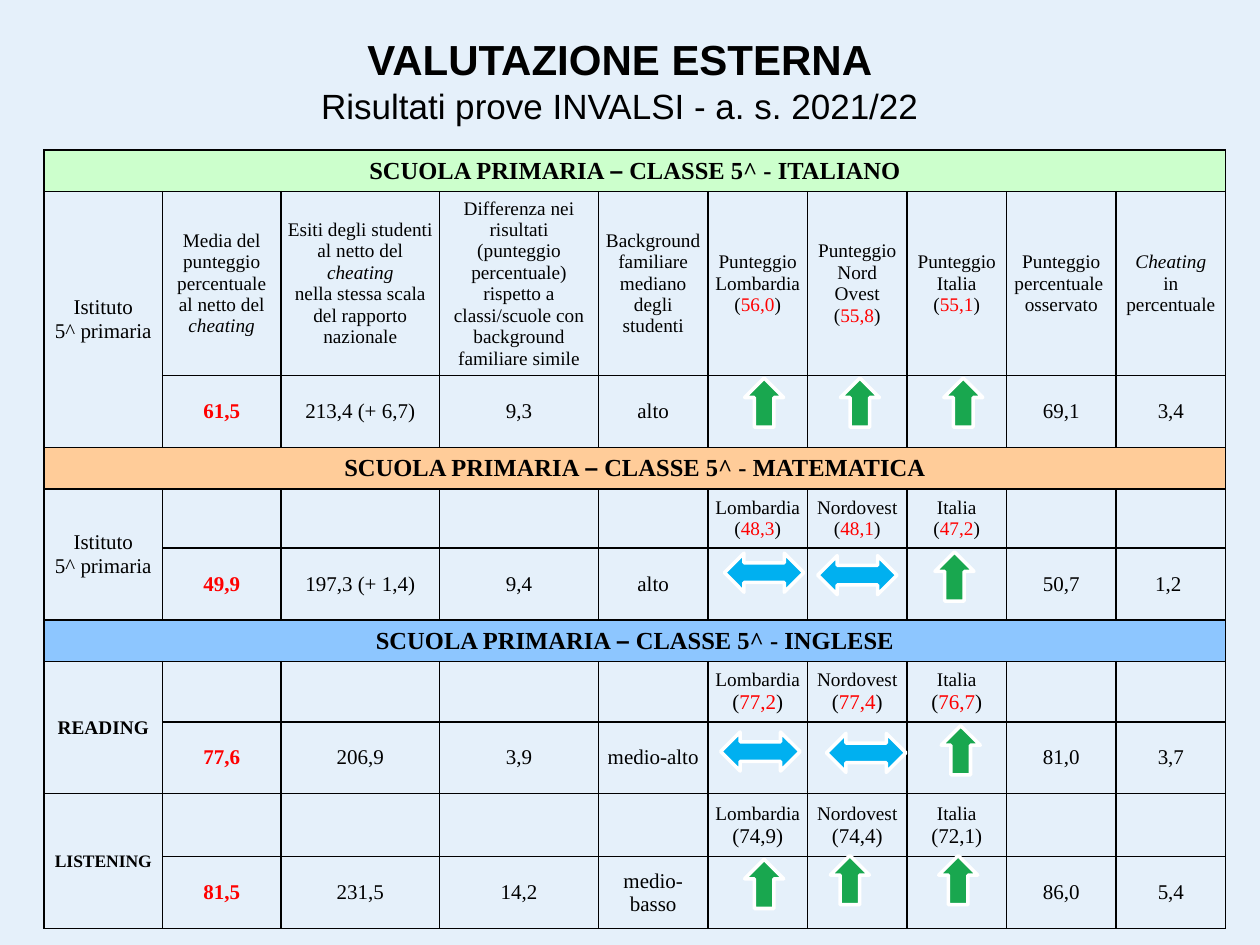
from dataclasses import dataclass
from typing import Optional

from lxml import etree
from pptx import Presentation
from pptx import util as u
from pptx.dml.color import RGBColor
from pptx.enum import shapes, text
from pptx.oxml import ns

SERIF, SANS = "Times New Roman", "Arial"
BLACK, RED, WHITE = "000000", "FF0000", "FFFFFF"
COLUMNS = (0.94, 0.94, 1.26, 1.26, 0.87, 0.79, 0.79, 0.79, 0.87, 0.87)
ROWS = (0.33, 1.38, 0.57, 0.33, 0.47, 0.57, 0.33, 0.48, 0.57, 0.5, 0.57)


@dataclass(frozen=True)
class Run:
    text: str
    color: Optional[str] = None
    bold: Optional[bool] = None
    italic: Optional[bool] = None
    size: Optional[float] = None
    font: Optional[str] = None


@dataclass(frozen=True)
class Banner:
    row: int
    subject: str
    fill: str


@dataclass(frozen=True)
class Block:
    row: int
    label: tuple[str, ...]
    label_size: float
    label_bold: bool
    headers: dict[int, tuple[Run, ...]]
    values: dict[int, str]


@dataclass(frozen=True)
class ArrowKind:
    shape: shapes.MSO_SHAPE
    width: float
    height: float
    fill: str


def scores(labels: tuple[str, ...], points: tuple[str, ...], size: float = 11,
           color: str = RED) -> dict[int, tuple[Run, ...]]:
    return {
        col: (Run(label), Run("(", size=size), Run(point, color, size=size), Run(")", size=size))
        for col, (label, point) in enumerate(zip(labels, points), 5)
    }


def values(mean: str, results: str, difference: str, background: str,
           observed: str, cheating: str) -> dict[int, str]:
    return dict(zip((1, 2, 3, 4, 8, 9),
                    (mean, results, difference, background, observed, cheating)))


REGIONS = ("Lombardia\n", "Nordovest ", "Italia\n")
BANNERS = (
    Banner(0, "ITALIANO", "CCFFCC"),
    Banner(3, "MATEMATICA", "FFCC99"),
    Banner(6, "INGLESE", "8DC6FF"),
)
HEADERS = {
    1: (Run("Media del punteggio\npercentuale al netto del "), Run("cheating", italic=True)),
    2: (Run("Esiti degli studenti\nal netto del "), Run("cheating\n", italic=True),
        Run("nella stessa scala del rapporto nazionale")),
    3: (Run("Differenza nei risultati (punteggio percentuale) rispetto a "
            "classi/scuole con background familiare simile"),),
    4: (Run("Background familiare\nmediano degli studenti"),),
    **scores(("Punteggio\nLombardia\n", "Punteggio\nNord Ovest\n", "Punteggio\nItalia\n"),
             ("56,0", "55,8", "55,1")),
    8: (Run("Punteggio percentuale \nosservato"),),
    9: (Run("Cheating\n", italic=True), Run("in percentuale")),
}
INSTITUTE = ("Istituto", "5^ primaria")
BLOCKS = (
    Block(1, INSTITUTE, 12, False, HEADERS,
          values("61,5", "213,4 (+ 6,7)", "9,3", "alto", "69,1", "3,4")),
    Block(4, INSTITUTE, 12, False, scores(REGIONS, ("48,3", "48,1", "47,2")),
          values("49,9", "197,3 (+ 1,4)", "9,4", "alto", "50,7", "1,2 ")),
    Block(7, ("READING",), 11, True, scores(REGIONS, ("77,2", "77,4", "76,7"), 12),
          values("77,6", "206,9", "3,9", "medio-alto", "81,0", "3,7")),
    Block(9, ("LISTENING",), 10, True, scores(REGIONS, ("74,9", "74,4", "72,1"), 12, BLACK),
          values("81,5", "231,5", "14,2", "medio-basso", "86,0", "5,4")),
)
ABOVE = ArrowKind(shapes.MSO_SHAPE.UP_ARROW, 0.31, 0.39, "19A74F")
EQUAL = ArrowKind(shapes.MSO_SHAPE.LEFT_RIGHT_ARROW, 0.63, 0.31, "00B0F0")
ARROWS = {
    ABOVE: ((5.91, 3), (6.67, 3), (7.49, 3), (7.42, 4.38), (7.47, 5.76),
            (5.91, 6.82), (6.59, 6.79), (7.45, 6.79)),
    EQUAL: ((5.75, 4.39), (6.49, 4.41), (5.72, 5.81), (6.56, 5.82)),
}


def rgb(value: str) -> RGBColor:
    return RGBColor.from_string(value)


def write(p, runs: tuple[Run, ...], size: float, font: str = SERIF,
          bold: bool = False, color: str = BLACK) -> None:
    p.alignment = text.PP_ALIGN.CENTER
    p.font.name, p.font.size, p.font.bold = font, u.Pt(size), bold
    p.font.color.rgb = rgb(color)
    for run in runs:
        for i, line in enumerate(run.text.split("\n")):
            if i:
                p.add_line_break()
            if not line:
                continue
            r = p.add_run()
            r.text = line
            if run.color:
                r.font.color.rgb = rgb(run.color)
            if run.size:
                r.font.size = u.Pt(run.size)
            if run.font:
                r.font.name = run.font
            if run.bold is not None:
                r.font.bold = run.bold
            if run.italic:
                r.font.italic = True


def style_cell(cell) -> None:
    cell.margin_left = cell.margin_right = u.Inches(0.05)
    cell.margin_top = cell.margin_bottom = u.Inches(0.05)
    cell.vertical_anchor = text.MSO_ANCHOR.MIDDLE
    tc_pr = cell._tc.get_or_add_tcPr()
    for side in ("a:lnL", "a:lnR", "a:lnT", "a:lnB"):
        ln = etree.SubElement(tc_pr, ns.qn(side), w=str(u.Pt(1)))
        fill = etree.SubElement(ln, ns.qn("a:solidFill"))
        etree.SubElement(fill, ns.qn("a:srgbClr"), val=BLACK)
    cell.fill.background()


def draw_banner(table, banner: Banner) -> None:
    cell = table.cell(banner.row, 0)
    cell.merge(table.cell(banner.row, len(COLUMNS) - 1))
    cell.fill.solid()
    cell.fill.fore_color.rgb = rgb(banner.fill)
    runs = (Run("SCUOLA PRIMARIA "), Run("–", font=SANS), Run(f" CLASSE 5^ - {banner.subject}"))
    write(cell.text_frame.paragraphs[0], runs, 14, bold=True)


def draw_block(table, block: Block) -> None:
    label = table.cell(block.row, 0)
    label.merge(table.cell(block.row + 1, 0))
    tf = label.text_frame
    for i, line in enumerate(block.label):
        p = tf.add_paragraph() if i else tf.paragraphs[0]
        write(p, (Run(line),), block.label_size, bold=block.label_bold)
    for col, runs in block.headers.items():
        write(table.cell(block.row, col).text_frame.paragraphs[0], runs, 11)
    for col, value in block.values.items():
        p = table.cell(block.row + 1, col).text_frame.paragraphs[0]
        write(p, (Run(value),), 12, bold=col == 1, color=RED if col == 1 else BLACK)


def draw_table(s) -> None:
    table = s.shapes.add_table(len(ROWS), len(COLUMNS), u.Inches(0.35), u.Inches(1.19),
                               u.Inches(sum(COLUMNS)), u.Inches(sum(ROWS))).table
    table.first_row = table.horz_banding = False
    for column, width in zip(table.columns, COLUMNS):
        column.width = u.Inches(width)
    for row, height in zip(table.rows, ROWS):
        row.height = u.Inches(height)
    for cell in table.iter_cells():
        style_cell(cell)
    for banner in BANNERS:
        draw_banner(table, banner)
    for block in BLOCKS:
        draw_block(table, block)


def draw_title(s) -> None:
    tf = s.shapes.add_textbox(u.Inches(0.67), u.Inches(0.28),
                              u.Inches(8.5), u.Inches(0.71)).text_frame
    tf.word_wrap = True
    tf.vertical_anchor = text.MSO_ANCHOR.MIDDLE
    runs = (Run("VALUTAZIONE ESTERNA\n", bold=True),
            Run("Risultati prove INVALSI - a. s. 2021/22", size=20))
    write(tf.paragraphs[0], runs, 24, SANS)


def draw_arrow(s, kind: ArrowKind, left: float, top: float) -> None:
    sp = s.shapes.add_shape(kind.shape, u.Inches(left), u.Inches(top),
                            u.Inches(kind.width), u.Inches(kind.height))
    sp.shadow.inherit = False
    sp.fill.solid()
    sp.fill.fore_color.rgb = rgb(kind.fill)
    sp.line.color.rgb = rgb(WHITE)
    sp.line.width = u.Pt(2)


def main() -> None:
    prs = Presentation()
    prs.slide_width, prs.slide_height = u.Inches(10), u.Inches(7.5)
    s = prs.slides.add_slide(prs.slide_layouts[6])
    s.background.fill.solid()
    s.background.fill.fore_color.rgb = rgb("E5F0FA")
    draw_table(s)
    draw_title(s)
    for kind, places in ARROWS.items():
        for left, top in places:
            draw_arrow(s, kind, left, top)
    prs.save("out.pptx")


if __name__ == "__main__":
    main()
